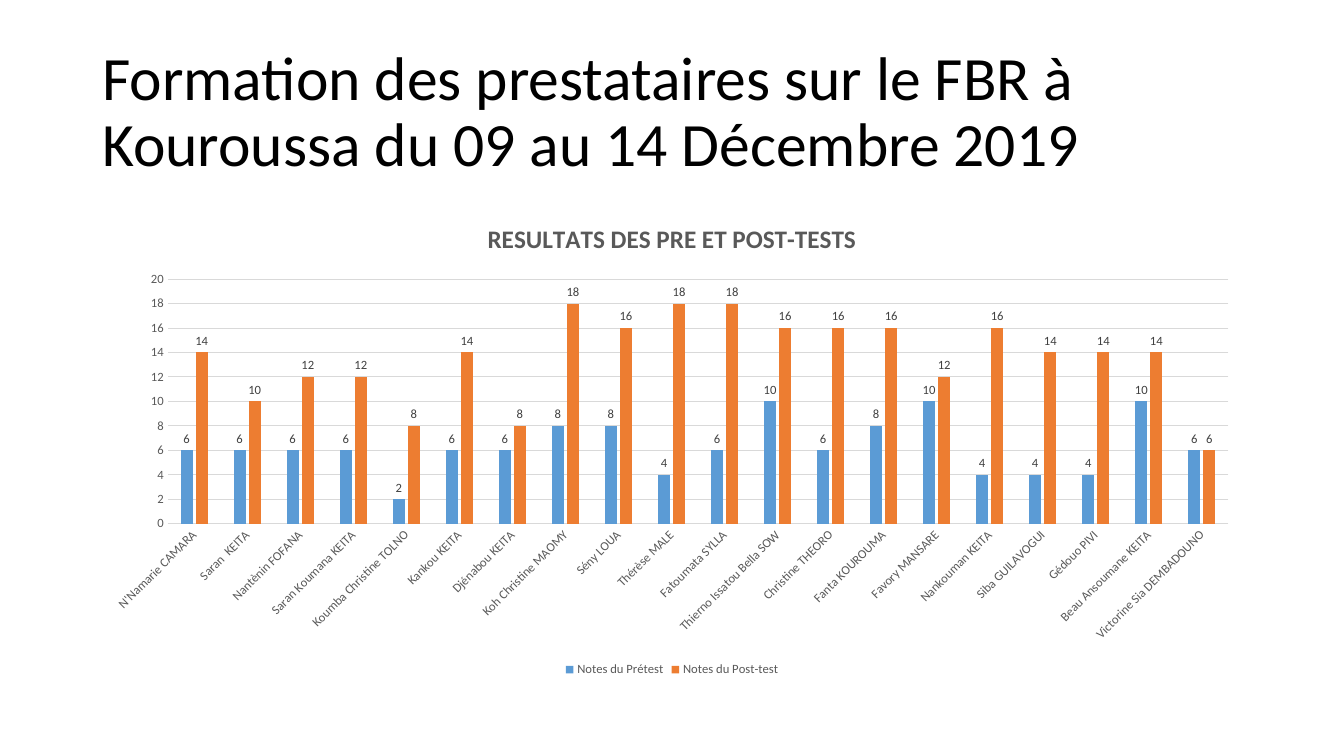
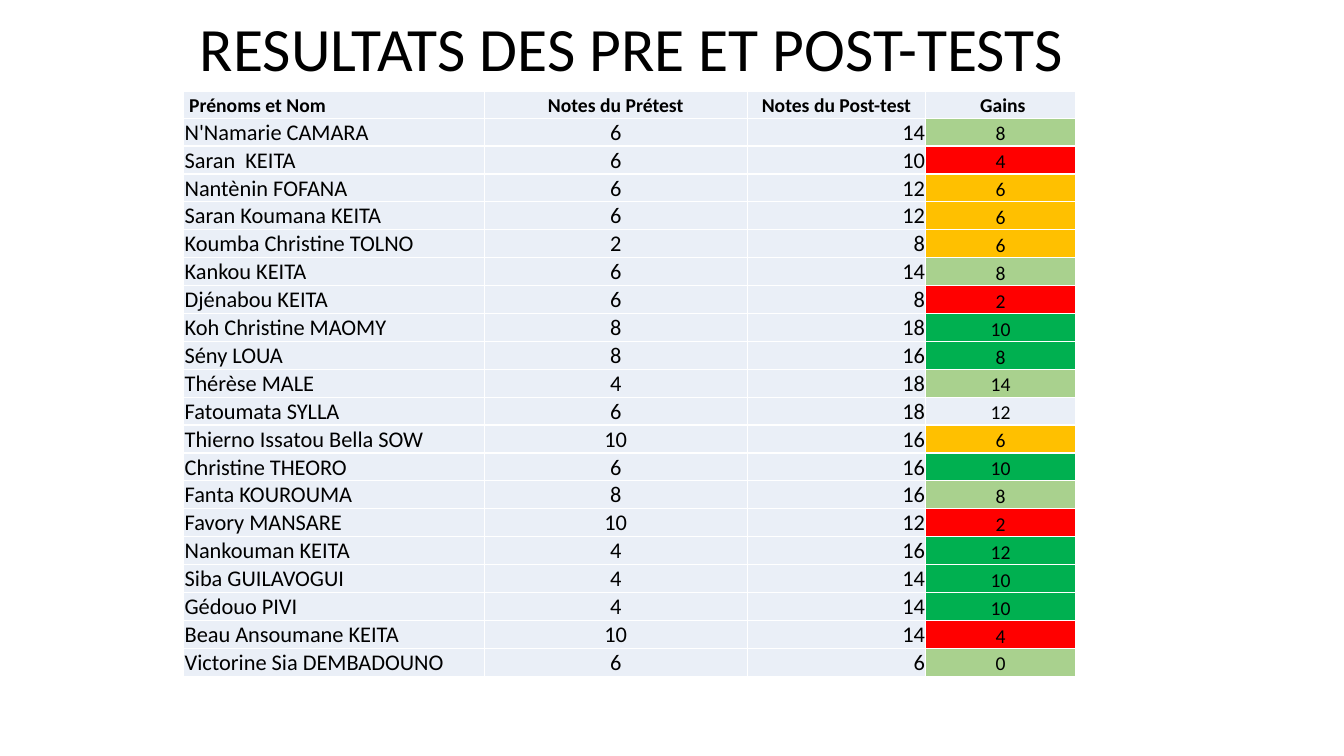
from dataclasses import dataclass

from lxml import etree
from pptx import Presentation
from pptx.chart.data import CategoryChartData
from pptx.dml.color import RGBColor
from pptx.enum.chart import XL_CHART_TYPE, XL_LABEL_POSITION, XL_LEGEND_POSITION, XL_TICK_MARK
from pptx.enum.text import MSO_ANCHOR, PP_ALIGN
from pptx.oxml.ns import qn
from pptx.slide import Slide
from pptx.table import _Cell
from pptx.text.text import Font
from pptx.util import Pt

COLUMNS = XL_CHART_TYPE.COLUMN_CLUSTERED
OUTSIDE_END = XL_LABEL_POSITION.OUTSIDE_END
LEGEND_BOTTOM = XL_LEGEND_POSITION.BOTTOM
NO_TICK = XL_TICK_MARK.NONE
MIDDLE, BOTTOM = MSO_ANCHOR.MIDDLE, MSO_ANCHOR.BOTTOM
LEFT, CENTER, RIGHT = PP_ALIGN.LEFT, PP_ALIGN.CENTER, PP_ALIGN.RIGHT

FONT = "Calibri"
BLACK, WHITE = "000000", "FFFFFF"
GREY, DARK_GREY, GRID = "595959", "404040", "D9D9D9"
BLUE, ORANGE = "5B9BD5", "ED7D31"
PALE, LIGHT_GREEN, GREEN, AMBER, RED = "EAEFF7", "A9D18E", "00B050", "FFC000", "FF0000"

CONTENT_LEFT, CONTENT_WIDTH = 66, 828
RESULTS_TITLE = "RESULTATS DES PRE ET POST-TESTS"
PRE_LABEL, POST_LABEL = "Notes du Prétest", "Notes du Post-test"
HEADERS = (" Prénoms et Nom", PRE_LABEL, POST_LABEL, " Gains")
COLUMN_WIDTHS = (214.5, 188, 127.5, 107)
HEADER_HEIGHT, ROW_HEIGHT = 19.4, 19.95


@dataclass(frozen=True)
class Trainee:
    name: str
    pre: int
    post: int
    gain_color: str

    @property
    def gain(self) -> int:
        return self.post - self.pre


TRAINEES = (
    Trainee("N'Namarie CAMARA", 6, 14, LIGHT_GREEN),
    Trainee("Saran  KEITA", 6, 10, RED),
    Trainee("Nantènin FOFANA", 6, 12, AMBER),
    Trainee("Saran Koumana KEITA", 6, 12, AMBER),
    Trainee("Koumba Christine TOLNO", 2, 8, AMBER),
    Trainee("Kankou KEITA", 6, 14, LIGHT_GREEN),
    Trainee("Djénabou KEITA", 6, 8, RED),
    Trainee("Koh Christine MAOMY", 8, 18, GREEN),
    Trainee("Sény LOUA", 8, 16, GREEN),
    Trainee("Thérèse MALE", 4, 18, LIGHT_GREEN),
    Trainee("Fatoumata SYLLA", 6, 18, PALE),
    Trainee("Thierno Issatou Bella SOW", 10, 16, AMBER),
    Trainee("Christine THEORO", 6, 16, GREEN),
    Trainee("Fanta KOUROUMA", 8, 16, LIGHT_GREEN),
    Trainee("Favory MANSARE", 10, 12, RED),
    Trainee("Nankouman KEITA", 4, 16, GREEN),
    Trainee("Siba GUILAVOGUI", 4, 14, GREEN),
    Trainee("Gédouo PIVI", 4, 14, GREEN),
    Trainee("Beau Ansoumane KEITA", 10, 14, RED),
    Trainee("Victorine Sia DEMBADOUNO", 6, 6, LIGHT_GREEN),
)


@dataclass(frozen=True)
class CellStyle:
    size: float
    align: PP_ALIGN
    fill: str = PALE
    bold: bool = False


def rgb(color: str) -> RGBColor:
    return RGBColor.from_string(color)


def style_font(font: Font, size: float, color: str, bold: bool = False) -> None:
    font.name = FONT
    font.size = Pt(size)
    font.bold = bold
    font.color.rgb = rgb(color)


def add_title(slide: Slide, text: str, top: float, height: float, indent: float = 0) -> None:
    sp = slide.shapes.add_textbox(Pt(CONTENT_LEFT), Pt(top), Pt(CONTENT_WIDTH), Pt(height))
    tf = sp.text_frame
    tf.word_wrap = True
    tf.vertical_anchor = MIDDLE
    tf.margin_left = Pt(7.2 + indent)
    tf.text = text
    p = tf.paragraphs[0]
    p.line_spacing = 0.9
    style_font(p.runs[0].font, 44, BLACK)


def add_results_chart(slide: Slide) -> None:
    data = CategoryChartData()
    data.categories = [t.name for t in TRAINEES]
    data.add_series(PRE_LABEL, [t.pre for t in TRAINEES])
    data.add_series(POST_LABEL, [t.post for t in TRAINEES])
    chart = slide.shapes.add_chart(
        COLUMNS, Pt(CONTENT_LEFT), Pt(144), Pt(CONTENT_WIDTH), Pt(342.5), data
    ).chart
    style_font(chart.font, 10, BLACK)

    chart.has_title = True
    tf = chart.chart_title.text_frame
    tf.text = RESULTS_TITLE
    style_font(tf.paragraphs[0].runs[0].font, 18, GREY, bold=True)
    chart.chart_title.include_in_layout = False

    chart.has_legend = True
    chart.legend.position = LEGEND_BOTTOM
    chart.legend.include_in_layout = False
    style_font(chart.legend.font, 9, GREY)

    plot = chart.plots[0]
    plot.gap_width = 219
    plot.overlap = -27
    plot.vary_by_categories = False
    plot.has_data_labels = True
    plot.data_labels.show_value = True
    plot.data_labels.position = OUTSIDE_END
    style_font(plot.data_labels.font, 9, DARK_GREY)
    for series, color in zip(plot.series, (BLUE, ORANGE)):
        series.format.fill.solid()
        series.format.fill.fore_color.rgb = rgb(color)

    names, scores = chart.category_axis, chart.value_axis
    for axis in (names, scores):
        axis.major_tick_mark = axis.minor_tick_mark = NO_TICK
        style_font(axis.tick_labels.font, 9, GREY)
    scores.minimum_scale, scores.maximum_scale, scores.major_unit = 0, 20, 2
    scores.format.line.fill.background()
    for line in (names.format.line, scores.major_gridlines.format.line):
        line.color.rgb = rgb(GRID)
        line.width = Pt(0.75)
    for body in chart.element.xpath(".//c:catAx/c:txPr/a:bodyPr"):
        body.set("rot", "-2700000")


def add_borders(cell: _Cell, color: str, width: float) -> None:
    properties = cell._tc.get_or_add_tcPr()
    for side in ("a:lnL", "a:lnR", "a:lnT", "a:lnB"):
        line = etree.SubElement(properties, qn(side), w=str(Pt(width)))
        fill = etree.SubElement(line, qn("a:solidFill"))
        etree.SubElement(fill, qn("a:srgbClr"), val=color)


def fill_cell(cell: _Cell, text: str, style: CellStyle) -> None:
    add_borders(cell, WHITE, 1)
    cell.fill.solid()
    cell.fill.fore_color.rgb = rgb(style.fill)
    cell.vertical_anchor = BOTTOM
    cell.margin_left = cell.margin_right = cell.margin_top = Pt(0.6)
    cell.margin_bottom = Pt(0)
    cell.text_frame.text = text
    p = cell.text_frame.paragraphs[0]
    p.alignment = style.align
    style_font(p.runs[0].font, style.size, BLACK, style.bold)


def add_results_table(slide: Slide) -> None:
    row_heights = [HEADER_HEIGHT] + [ROW_HEIGHT] * len(TRAINEES)
    table = slide.shapes.add_table(
        len(row_heights), len(HEADERS), Pt(131.3), Pt(65),
        Pt(sum(COLUMN_WIDTHS)), Pt(sum(row_heights)),
    ).table
    table.first_row = table.horz_banding = False
    for column, width in zip(table.columns, COLUMN_WIDTHS):
        column.width = Pt(width)
    for row, height in zip(table.rows, row_heights):
        row.height = Pt(height)

    for col, header in enumerate(HEADERS):
        align = CENTER if col else LEFT
        fill_cell(table.cell(0, col), header, CellStyle(14, align, bold=True))
    for row, trainee in enumerate(TRAINEES, start=1):
        values = (trainee.name, trainee.pre, trainee.post, trainee.gain)
        styles = (
            CellStyle(16, LEFT),
            CellStyle(16, CENTER),
            CellStyle(16, RIGHT),
            CellStyle(14, CENTER, trainee.gain_color),
        )
        for col, (value, style) in enumerate(zip(values, styles)):
            fill_cell(table.cell(row, col), str(value), style)


def main() -> None:
    prs = Presentation()
    prs.slide_width, prs.slide_height = Pt(960), Pt(540)
    blank = prs.slide_layouts[6]

    s = prs.slides.add_slide(blank)
    add_title(s, "Formation des prestataires sur le FBR à Kouroussa du 09 au 14 Décembre 2019", 28.8, 104.4)
    add_results_chart(s)

    s = prs.slides.add_slide(blank)
    add_title(s, RESULTS_TITLE, 9.4, 55.4, indent=69.6)
    add_results_table(s)

    prs.save("out.pptx")


if __name__ == "__main__":
    main()
